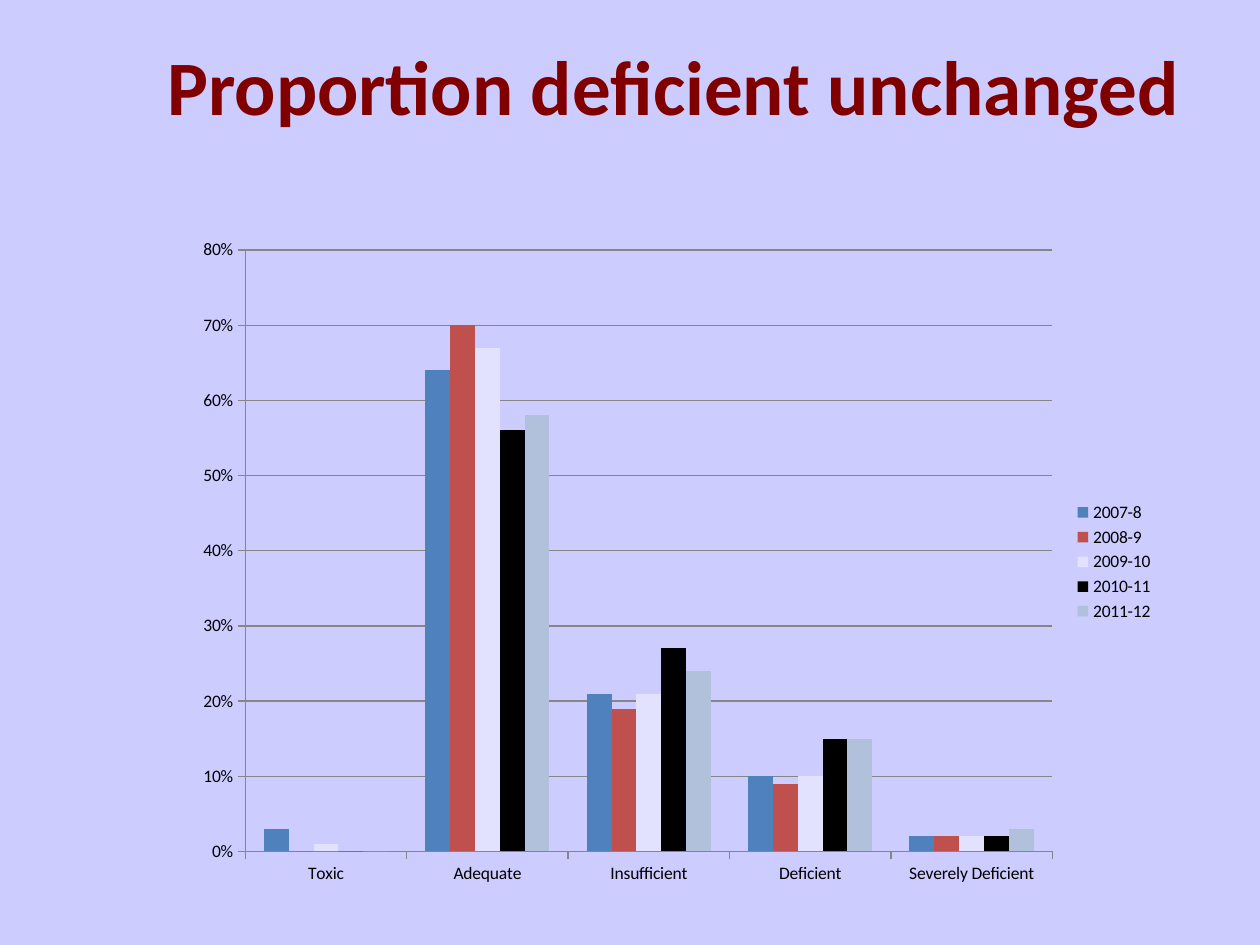
from dataclasses import dataclass

from pptx import Presentation
from pptx.chart.data import CategoryChartData
from pptx.dml.color import RGBColor
from pptx.enum import chart as chart_enum, text as text_enum
from pptx.util import Pt

LAVENDER = RGBColor(0xCC, 0xCC, 0xFF)
MAROON = RGBColor(0x80, 0x00, 0x00)
BLACK = RGBColor(0x00, 0x00, 0x00)
GREY = RGBColor(0x86, 0x86, 0x86)
BLUE = RGBColor(0x4F, 0x81, 0xBD)
RED = RGBColor(0xC0, 0x50, 0x4D)
PALE = RGBColor(0xE2, 0xE2, 0xFF)
STEEL = RGBColor(0xB2, 0xC1, 0xDB)
FONT = "Calibri"


@dataclass(frozen=True)
class Box:
    left: float
    top: float
    width: float
    height: float

    def lengths(self) -> tuple:
        return tuple(Pt(n) for n in (self.left, self.top, self.width, self.height))


@dataclass(frozen=True)
class Year:
    name: str
    shares: tuple[float, ...]
    color: RGBColor


CATEGORIES = ("Toxic", "Adequate", "Insufficient", "Deficient", "Severely Deficient")
YEARS = (
    Year("2007-8", (0.03, 0.64, 0.21, 0.10, 0.02), BLUE),
    Year("2008-9", (0, 0.70, 0.19, 0.09, 0.02), RED),
    Year("2009-10", (0.01, 0.67, 0.21, 0.10, 0.02), PALE),
    Year("2010-11", (0, 0.56, 0.27, 0.15, 0.02), BLACK),
    Year("2011-12", (0, 0.58, 0.24, 0.15, 0.03), STEEL),
)


def add_text(slide, box: Box, content: str, *, size: float, color: RGBColor,
             bold: bool = False) -> None:
    frame = slide.shapes.add_textbox(*box.lengths()).text_frame
    frame.word_wrap = True
    frame.vertical_anchor = text_enum.MSO_ANCHOR.MIDDLE
    paragraph = frame.paragraphs[0]
    paragraph.text = content
    paragraph.alignment = text_enum.PP_ALIGN.CENTER
    paragraph.font.name = FONT
    paragraph.font.size = Pt(size)
    paragraph.font.bold = bold
    paragraph.font.color.rgb = color


def style_line(line) -> None:
    line.color.rgb = GREY
    line.width = Pt(0.75)


def add_column_chart(slide, box: Box, years: tuple[Year, ...]) -> None:
    data = CategoryChartData(number_format="0%")
    data.categories = CATEGORIES
    for year in years:
        data.add_series(year.name, year.shares)
    chart = slide.shapes.add_chart(
        chart_enum.XL_CHART_TYPE.COLUMN_CLUSTERED, *box.lengths(), data).chart
    chart.has_title = False
    chart.font.name = FONT
    chart.font.size = Pt(10)
    chart.font.color.rgb = BLACK

    plot = chart.plots[0]
    plot.gap_width = 150
    plot.overlap = 0
    plot.vary_by_categories = False
    for series, year in zip(plot.series, years):
        series.invert_if_negative = False
        series.format.fill.solid()
        series.format.fill.fore_color.rgb = year.color

    for axis in (chart.category_axis, chart.value_axis):
        axis.major_tick_mark = chart_enum.XL_TICK_MARK.OUTSIDE
        axis.minor_tick_mark = chart_enum.XL_TICK_MARK.NONE
        style_line(axis.format.line)
    values = chart.value_axis
    values.minimum_scale, values.maximum_scale, values.major_unit = 0, 0.8, 0.1
    values.tick_labels.number_format = "0%"
    values.tick_labels.number_format_is_linked = False
    values.has_major_gridlines = True
    style_line(values.major_gridlines.format.line)

    chart.has_legend = True
    chart.legend.position = chart_enum.XL_LEGEND_POSITION.RIGHT
    chart.legend.include_in_layout = False


def main() -> None:
    presentation = Presentation()
    presentation.slide_width, presentation.slide_height = Pt(720), Pt(540)
    slide = presentation.slides.add_slide(presentation.slide_layouts[6])
    slide.background.fill.solid()
    slide.background.fill.fore_color.rgb = LAVENDER
    add_text(slide, Box(78, 6, 614, 85), "Proportion deficient unchanged",
             size=44, color=MAROON, bold=True)
    add_column_chart(slide, Box(105, 129.6, 561.6, 383), YEARS)
    presentation.save("out.pptx")


if __name__ == "__main__":
    main()
